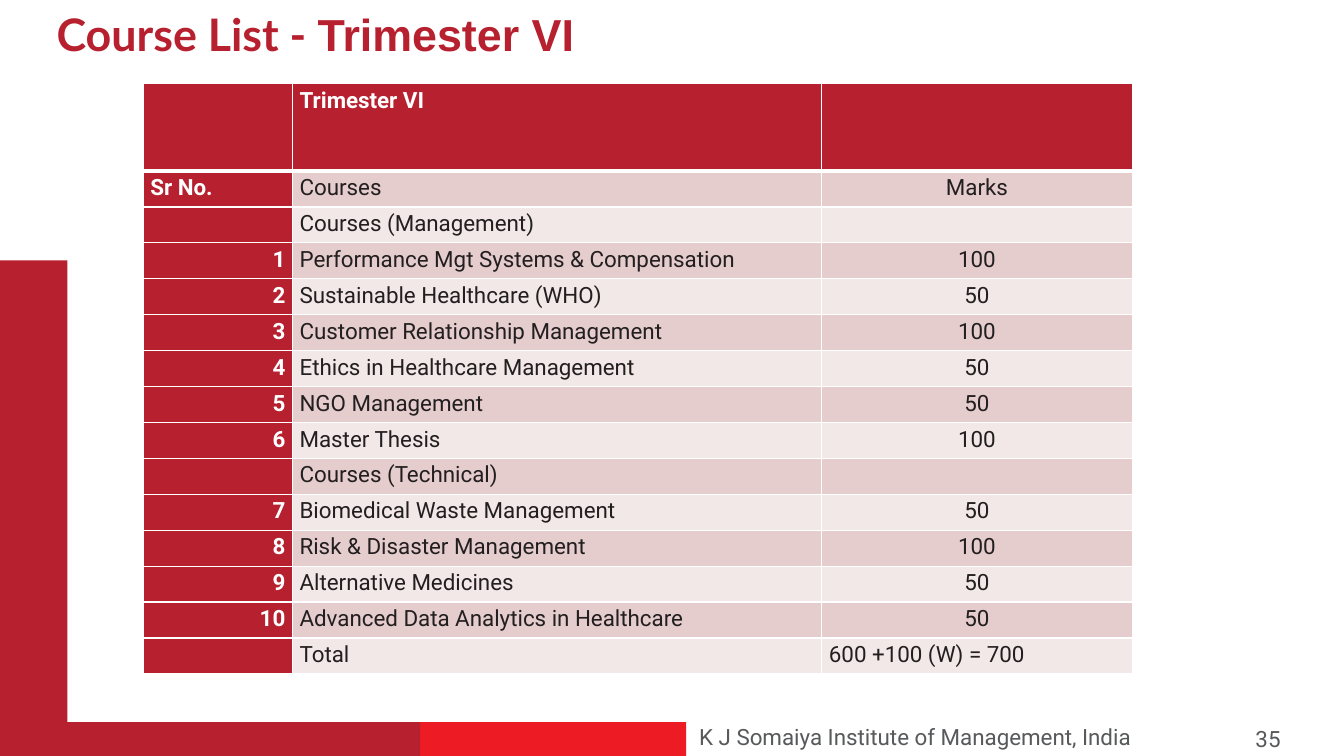
from dataclasses import dataclass
from itertools import count

from lxml import etree
from pptx import Presentation
from pptx.dml.color import RGBColor
from pptx.enum.shapes import MSO_SHAPE
from pptx.enum.text import MSO_ANCHOR, PP_ALIGN
from pptx.oxml.ns import qn
from pptx.util import Cm, Pt

RECTANGLE = MSO_SHAPE.RECTANGLE
TOP = MSO_ANCHOR.TOP
LEFT, CENTER, RIGHT = PP_ALIGN.LEFT, PP_ALIGN.CENTER, PP_ALIGN.RIGHT


@dataclass(frozen=True)
class Theme:
    crimson: str = "B7202E"
    red: str = "ED1C24"
    gray: str = "58595B"
    ink: str = "231F20"
    white: str = "FFFFFF"
    bands: tuple = ("F3E8E8", "E6CDCD")
    heading_font: str = "Lato"
    heading_accent_font: str = "Arial"
    body_font: str = "Roboto"
    heading_size: int = 32
    body_size: int = 16
    line_width: int = 1
    header_line_width: int = 3


THEME = Theme()
SECTIONS = {
    "Courses (Management)": [
        ("Performance Mgt Systems & Compensation", 100),
        ("Sustainable Healthcare (WHO)", 50),
        ("Customer Relationship Management", 100),
        ("Ethics in Healthcare Management", 50),
        ("NGO Management", 50),
        ("Master Thesis", 100),
    ],
    "Courses (Technical)": [
        ("Biomedical Waste Management", 50),
        ("Risk & Disaster Management", 100),
        ("Alternative Medicines", 50),
        ("Advanced Data Analytics in Healthcare", 50),
    ],
}
COLUMN_WIDTHS = (3.76, 13.34, 7.82)
HEADER_HEIGHT = 2.2
BODY_HEIGHT = 12.68


def set_attributes(target, values):
    for name, value in values.items():
        setattr(target, name, value)


def add_run(paragraph, text, color, size=THEME.body_size, name=THEME.body_font, bold=False):
    run = paragraph.add_run()
    run.text = text
    set_attributes(run.font, {"size": Pt(size), "name": name, "bold": bold})
    run.font.color.rgb = RGBColor.from_string(color)


def add_bar(slide, left, top, width, height, color):
    shape = slide.shapes.add_shape(RECTANGLE, Cm(left), Cm(top), Cm(width), Cm(height))
    shape.shadow.inherit = False
    shape.fill.solid()
    shape.fill.fore_color.rgb = RGBColor.from_string(color)
    shape.line.fill.background()


def add_label(slide, left, top, width, height, text):
    shape = slide.shapes.add_textbox(Cm(left), Cm(top), Cm(width), Cm(height))
    shape.text_frame.word_wrap = True
    add_run(shape.text_frame.paragraphs[0], text, THEME.gray)


def fill_title(slide, parts):
    title = slide.shapes.title
    set_attributes(title, {"left": Cm(1.17), "top": Cm(0.2), "width": Cm(25.3), "height": Cm(3.05)})
    set_attributes(title.text_frame, {"vertical_anchor": TOP, "word_wrap": True})
    paragraph = title.text_frame.paragraphs[0]
    set_attributes(paragraph, {"alignment": LEFT, "line_spacing": 0.9})
    for text, font_name in parts:
        add_run(paragraph, text, THEME.crimson, THEME.heading_size, font_name, True)


def add_borders(cell, row):
    properties = cell._tc.get_or_add_tcPr()
    for side in "LRTB":
        thick = (row, side) in ((0, "B"), (1, "T"))
        width = THEME.header_line_width if thick else THEME.line_width
        line = etree.SubElement(properties, qn(f"a:ln{side}"), w=str(Pt(width)))
        fill = etree.SubElement(line, qn("a:solidFill"))
        etree.SubElement(fill, qn("a:srgbClr"), val=THEME.white)


def format_cell(cell, row, column, text, alignment):
    accent = row == 0 or column == 0
    margins = {"margin_left": Cm(0.18), "margin_right": Cm(0.18), "margin_top": 0, "margin_bottom": 0}
    set_attributes(cell, margins)
    add_borders(cell, row)
    cell.fill.solid()
    cell.fill.fore_color.rgb = RGBColor.from_string(THEME.crimson if accent else THEME.bands[row % 2])
    paragraph = cell.text_frame.paragraphs[0]
    set_attributes(paragraph, {"alignment": alignment, "line_spacing": 1.15})
    if text:
        add_run(paragraph, text, THEME.white if accent else THEME.ink, bold=accent)


def course_rows():
    rows = [("", "Trimester VI", ""), ("Sr No.", "Courses", "Marks")]
    numbers = count(1)
    for section, courses in SECTIONS.items():
        rows.append(("", section, ""))
        rows += [(str(next(numbers)), course, str(marks)) for course, marks in courses]
    return rows + [("", "Total", "600 +100 (W) = 700")]


def cell_alignment(row, column, text, last_row):
    if column == 0 and text.isdigit():
        return RIGHT
    if column == 2 and row != last_row:
        return CENTER
    return LEFT


def add_course_table(slide, rows):
    frame = slide.shapes.add_table(
        len(rows), len(COLUMN_WIDTHS), Cm(3.61), Cm(2.11),
        Cm(sum(COLUMN_WIDTHS)), Cm(HEADER_HEIGHT + BODY_HEIGHT))
    table = frame.table
    set_attributes(table, {"first_row": True, "first_col": True, "horz_banding": False})
    for column, width in zip(table.columns, COLUMN_WIDTHS):
        column.width = Cm(width)
    last_row = len(rows) - 1
    for row, texts in enumerate(rows):
        table.rows[row].height = Cm(BODY_HEIGHT / last_row if row else HEADER_HEIGHT)
        for column, text in enumerate(texts):
            alignment = cell_alignment(row, column, text, last_row)
            format_cell(table.cell(row, column), row, column, text, alignment)


def main():
    presentation = Presentation()
    set_attributes(presentation, {"slide_width": Cm(33.87), "slide_height": Cm(19.05)})
    slide = presentation.slides.add_slide(presentation.slide_layouts[5])
    add_label(slide, 17.37, 18.11, 12.93, 0.94, "K J Somaiya Institute of Management, India")
    add_bar(slide, 0, 6.56, 1.7, 12.49, THEME.crimson)
    add_bar(slide, 10.59, 18.2, 6.7, 0.85, THEME.red)
    add_bar(slide, 0, 18.2, 10.59, 0.85, THEME.crimson)
    fill_title(slide, [
        ("Course List - ", THEME.heading_font),
        ("Trimester VI", THEME.heading_accent_font),
    ])
    add_label(slide, 31.39, 18.16, 2.21, 1.02, "35")
    add_course_table(slide, course_rows())
    presentation.save("out.pptx")


if __name__ == "__main__":
    main()
